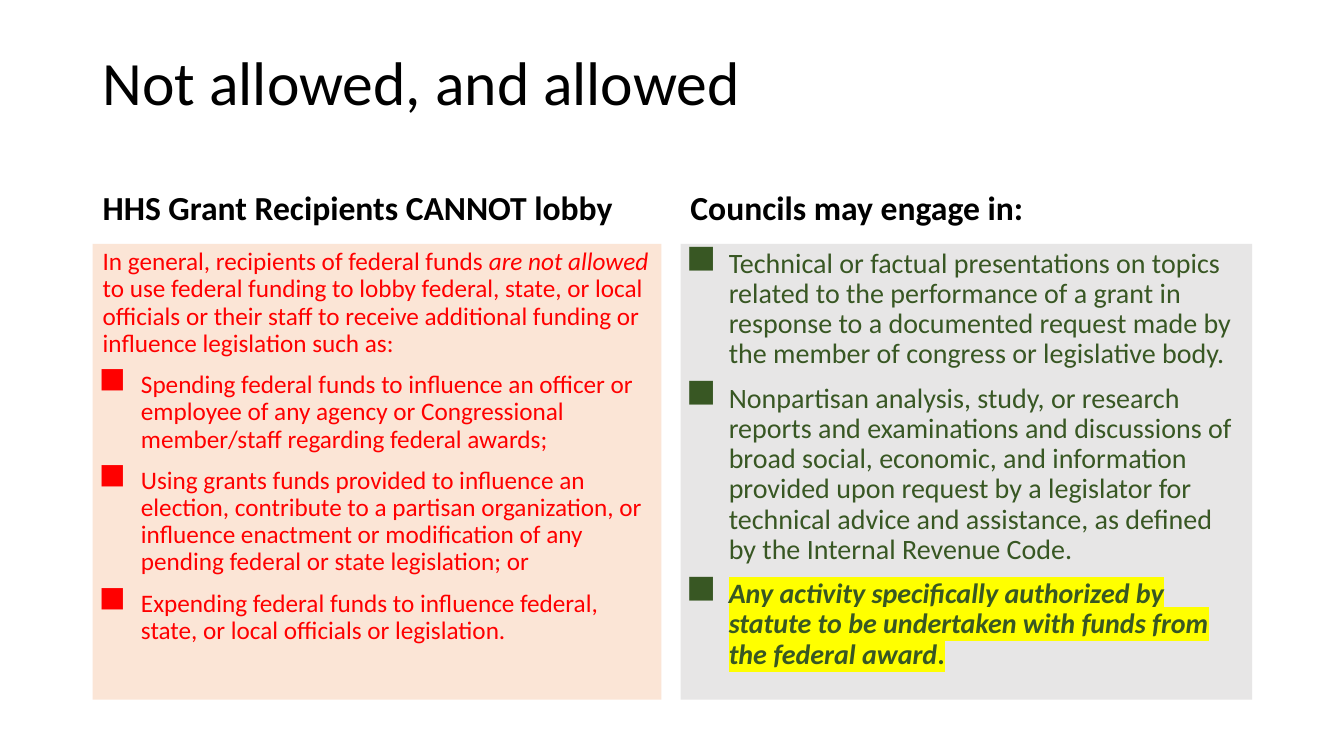
from lxml.etree import SubElement
from pptx import Presentation
from pptx.dml.color import RGBColor
from pptx.enum.shapes import MSO_SHAPE
from pptx.enum.text import MSO_ANCHOR, PP_ALIGN
from pptx.oxml.ns import qn
from pptx.util import Inches, Pt

COLORS = {
    "black": "000000",
    "red": "FF0000",
    "green": "385723",
    "peach": "FBE5D6",
    "gray": "E7E6E6",
    "yellow": "FFFF00",
}
FONT = "Calibri"
LEFT, RIGHT_COLUMN = 0.92, 6.75
HEADING_TOP, HEADING_HEIGHT = 1.41, 0.9
PANEL_TOP, PANEL_HEIGHT = 2.42, 4.52

# Each paragraph is (bulleted, spans); each span is (text, styles).
NOT_ALLOWED = [
    (False, [
        ("In general, recipients of federal funds ", ""),
        ("are not allowed ", "italic"),
        ("to use federal funding to lobby federal, state, or local officials or their "
         "staff to receive additional funding or influence legislation such as:", ""),
    ]),
    (True, [("Spending federal funds to influence an officer or employee of any agency or "
             "Congressional member/staff regarding federal awards;", "")]),
    (True, [("Using grants funds provided to influence an election, contribute to a partisan "
             "organization, or influence enactment or modification of any pending federal or "
             "state legislation; or", "")]),
    (True, [("Expending federal funds to influence federal, state, or local officials or "
             "legislation.", "")]),
]
ALLOWED = [
    (True, [("Technical or factual presentations on topics related to the performance of a "
             "grant in response to a documented request made by the member of congress or "
             "legislative body.", "")]),
    (True, [("Nonpartisan analysis, study, or research reports and examinations and "
             "discussions of broad social, economic, and information provided upon request by "
             "a legislator for technical advice and assistance, as defined by the Internal "
             "Revenue Code.", "")]),
    (True, [
        ("Any activity specifically authorized by statute to be undertaken with funds from "
         "the federal award", "bold italic highlight"),
        (".", "bold highlight"),
    ]),
]


def color(name):
    return RGBColor.from_string(COLORS[name])


def add_span(para, text, size, ink, styles=""):
    span = para.add_run()
    span.text = text
    span.font.size = Pt(size)
    span.font.bold = "bold" in styles
    span.font.italic = "italic" in styles
    span.font.color.rgb = color(ink)
    if "highlight" in styles:
        marker = SubElement(span.font._element, qn("a:highlight"))
        SubElement(marker, qn("a:srgbClr"), val=COLORS["yellow"])
    span.font.name = FONT


def add_bullet(para):
    """Give the paragraph a hanging arrowhead bullet."""
    properties = para._p.get_or_add_pPr()
    properties.set("marL", str(Inches(0.38)))
    properties.set("indent", str(-Inches(0.38)))
    SubElement(properties, qn("a:buFont"), typeface="Wingdings 2")
    SubElement(properties, qn("a:buChar"), char="➢")


def add_heading(slide, box, text, size, anchor, styles=""):
    frame = slide.shapes.add_textbox(*map(Inches, box)).text_frame
    frame.word_wrap = True
    frame.vertical_anchor = anchor
    para = frame.paragraphs[0]
    para.line_spacing = 0.9
    add_span(para, text, size, "black", styles)


def add_panel(slide, box, paragraphs, size, ink, fill):
    panel = slide.shapes.add_shape(MSO_SHAPE.RECTANGLE, *map(Inches, box))
    panel.shadow.inherit = False
    panel.fill.solid()
    panel.fill.fore_color.rgb = color(fill)
    panel.line.fill.background()
    frame = panel.text_frame
    frame.word_wrap = True
    frame.vertical_anchor = MSO_ANCHOR.TOP
    for index, (bulleted, spans) in enumerate(paragraphs):
        para = frame.add_paragraph() if index else frame.paragraphs[0]
        para.alignment = PP_ALIGN.LEFT
        para.line_spacing = 0.9
        para.space_before = Pt(10)
        if bulleted:
            add_bullet(para)
        for text, styles in spans:
            add_span(para, text, size, ink, styles)


def add_column(slide, left, width, heading, paragraphs, size, ink, fill):
    add_heading(slide, (left, HEADING_TOP, width, HEADING_HEIGHT), heading, 24,
                MSO_ANCHOR.BOTTOM, "bold")
    add_panel(slide, (left, PANEL_TOP, width, PANEL_HEIGHT), paragraphs, size, ink, fill)


def main():
    deck = Presentation()
    deck.slide_width, deck.slide_height = Inches(13.33), Inches(7.5)
    slide = deck.slides.add_slide(deck.slide_layouts[6])
    add_heading(slide, (LEFT, 0.4, 11.5, 0.9), "Not allowed, and allowed", 44,
                MSO_ANCHOR.MIDDLE)
    add_column(slide, LEFT, 5.64, "HHS Grant Recipients CANNOT lobby", NOT_ALLOWED,
               18, "red", "peach")
    add_column(slide, RIGHT_COLUMN, 5.67, "Councils may engage in:", ALLOWED,
               20, "green", "gray")
    deck.save("out.pptx")


if __name__ == "__main__":
    main()
